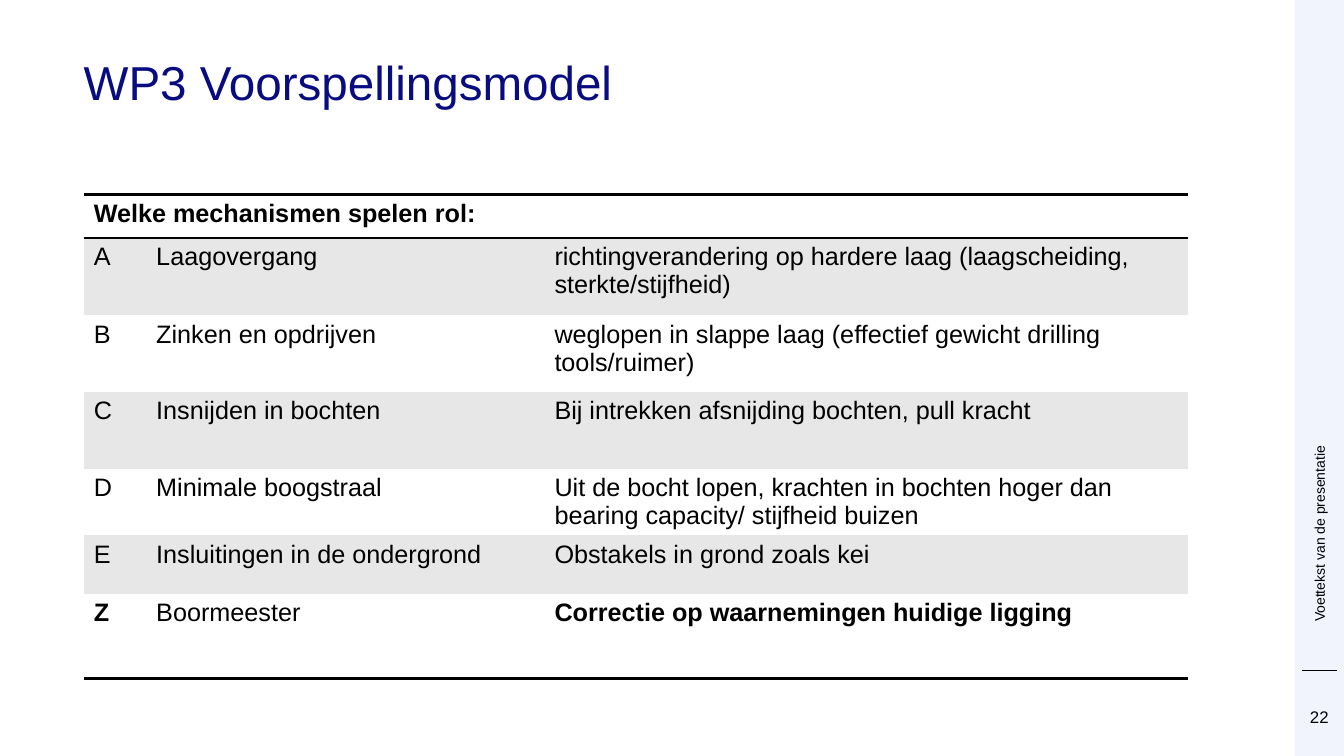
"""Build the WP3 forecast model slide with its table of mechanisms."""
from lxml.etree import SubElement as Sub
from pptx import Presentation
from pptx.dml.color import RGBColor as RGB
from pptx.enum.shapes import MSO_CONNECTOR as Link, MSO_SHAPE as Shape
from pptx.enum.text import MSO_ANCHOR as Anchor, MSO_AUTO_SIZE as Auto, PP_ALIGN as Align
from pptx.oxml.ns import qn
from pptx.util import Inches, Pt

theme = {
    "font": "Arial", "ink": "000000", "navy": "080C80", "side": "F1F3FD",
    "bands": ("FFFFFF", "E7E7E7"),
    "title": 34, "body": 18, "page": 12, "foot": 10,
}


def write(frame, text, size, color=theme["ink"], bold=False, align=Align.LEFT):
    para = frame.paragraphs[0]
    para.alignment = align
    run = para.add_run()
    run.text = text
    look = {"name": theme["font"], "size": Pt(size), "bold": bold}
    for key, value in look.items():
        setattr(run.font, key, value)
    run.font.color.rgb = RGB.from_string(color)
    return para


def setup(frame, anchor):
    look = {"word_wrap": True, "auto_size": Auto.NONE, "vertical_anchor": anchor,
            "margin_left": 0, "margin_right": 0, "margin_top": 0, "margin_bottom": 0}
    for key, value in look.items():
        setattr(frame, key, value)
    return frame


deck = Presentation()
deck.slide_width, deck.slide_height = Inches(13.33), Inches(7.5)
slide = deck.slides.add_slide(deck.slide_layouts[5])
shapes = slide.shapes

side = shapes.add_shape(Shape.RECTANGLE, Inches(12.84), 0, Inches(0.49), Inches(7.5))
side.shadow.inherit = False
side.fill.solid()
side.fill.fore_color.rgb = RGB.from_string(theme["side"])
side.line.fill.background()

rule = shapes.add_connector(Link.STRAIGHT, Inches(12.91), Inches(6.65), Inches(13.26), Inches(6.65))
rule.line.width = Pt(0.5)
rule.line.color.rgb = RGB.from_string(theme["ink"])
Sub(rule._element.spPr, qn("a:effectLst"))

title = shapes.title
title.left, title.top = Inches(0.83), Inches(0.59)
title.width, title.height = Inches(11.5), Inches(1.02)
head = write(setup(title.text_frame, Anchor.TOP), "WP3 Voorspellingsmodel",
             theme["title"], theme["navy"])
head.line_spacing = 0.9

foot = shapes.add_textbox(Inches(13), Inches(0.59), Inches(0.17), Inches(5.58))
write(setup(foot.text_frame, Anchor.MIDDLE), "Voettekst van de presentatie", theme["foot"])
foot.text_frame._txBody.bodyPr.set("vert", "vert270")

page = shapes.add_textbox(Inches(12.84), Inches(7.01), Inches(0.49), Inches(0.2))
write(setup(page.text_frame, Anchor.TOP), "22", theme["page"], align=Align.CENTER)

rows = [
    ("Welke mechanismen spelen rol:", "", ""),
    ("A", "Laagovergang",
     "richtingverandering op hardere laag (laagscheiding, sterkte/stijfheid)"),
    ("B", "Zinken en opdrijven",
     "weglopen in slappe laag (effectief gewicht drilling tools/ruimer)"),
    ("C", "Insnijden in bochten", "Bij intrekken afsnijding bochten, pull kracht"),
    ("D", "Minimale boogstraal",
     "Uit de bocht lopen, krachten in bochten hoger dan bearing capacity/ stijfheid buizen"),
    ("E", "Insluitingen in de ondergrond", "Obstakels in grond zoals kei"),
    ("Z", "Boormeester", "Correctie op waarnemingen huidige ligging"),
]
widths = [0.62, 3.95, 6.38]
heights = [0.43, 0.77, 0.76, 0.76, 0.58, 0.58, 0.84]
last = len(rows) - 1
edges = {0: ("a:lnT", "a:lnB"), last: ("a:lnB",)}
bold = {(0, 0), (last, 0), (last, 2)}

table = shapes.add_table(len(rows), len(widths), Inches(0.83), Inches(1.93),
                         Inches(sum(widths)), Inches(sum(heights))).table
table.first_row = table.horz_banding = False
style = table._tbl.tblPr.find(qn("a:tableStyleId"))
style.text = "{2D5ABB26-0587-4C30-8999-92F81FD0307C}"
for col, width in zip(table.columns, widths):
    col.width = Inches(width)
for row, height in zip(table.rows, heights):
    row.height = Inches(height)
table.cell(0, 0).merge(table.cell(0, 2))

for r, texts in enumerate(rows):
    for c, text in enumerate(texts):
        cell = table.cell(r, c)
        for edge in edges.get(r, ()):
            line = Sub(cell._tc.get_or_add_tcPr(), qn(edge), w=str(Pt(2)))
            Sub(Sub(line, qn("a:solidFill")), qn("a:srgbClr"), val=theme["ink"])
        cell.fill.solid()
        cell.fill.fore_color.rgb = RGB.from_string(theme["bands"][r % 2])
        if text:
            write(cell.text_frame, text, theme["body"], bold=(r, c) in bold)

deck.save("out.pptx")
